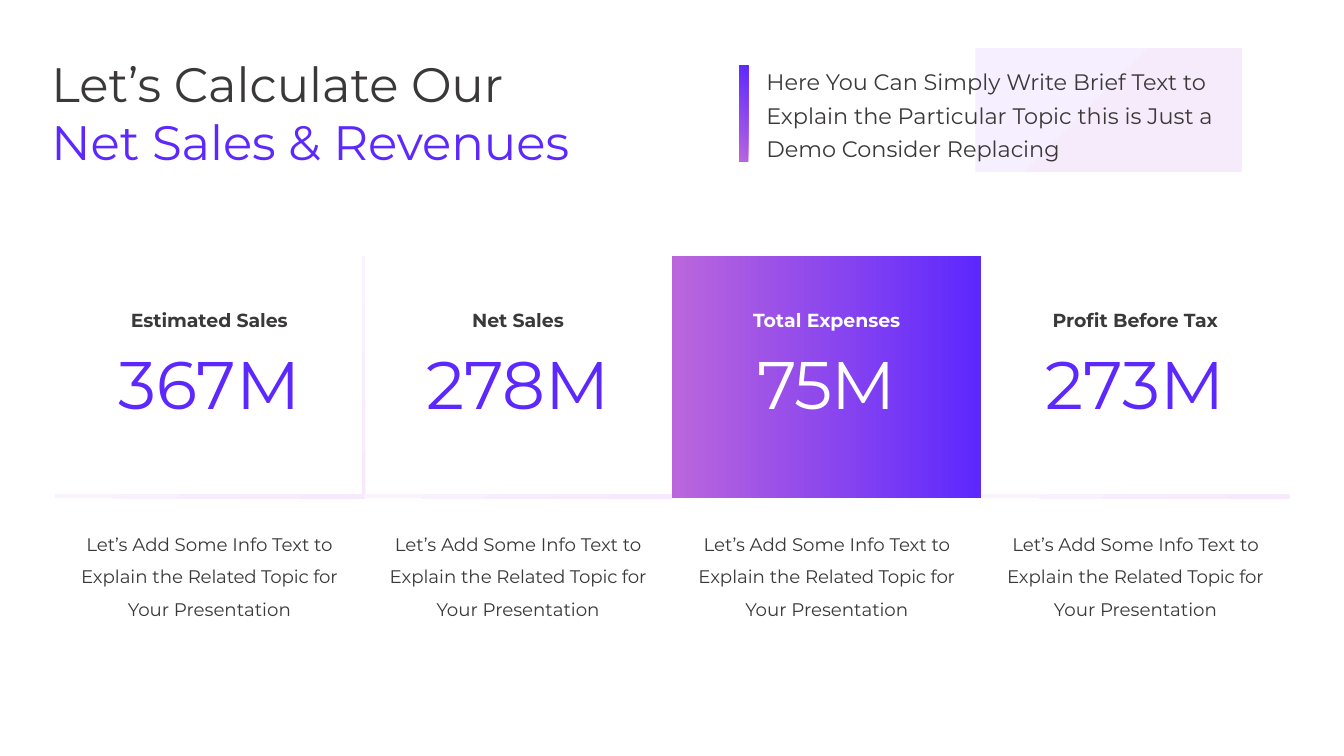
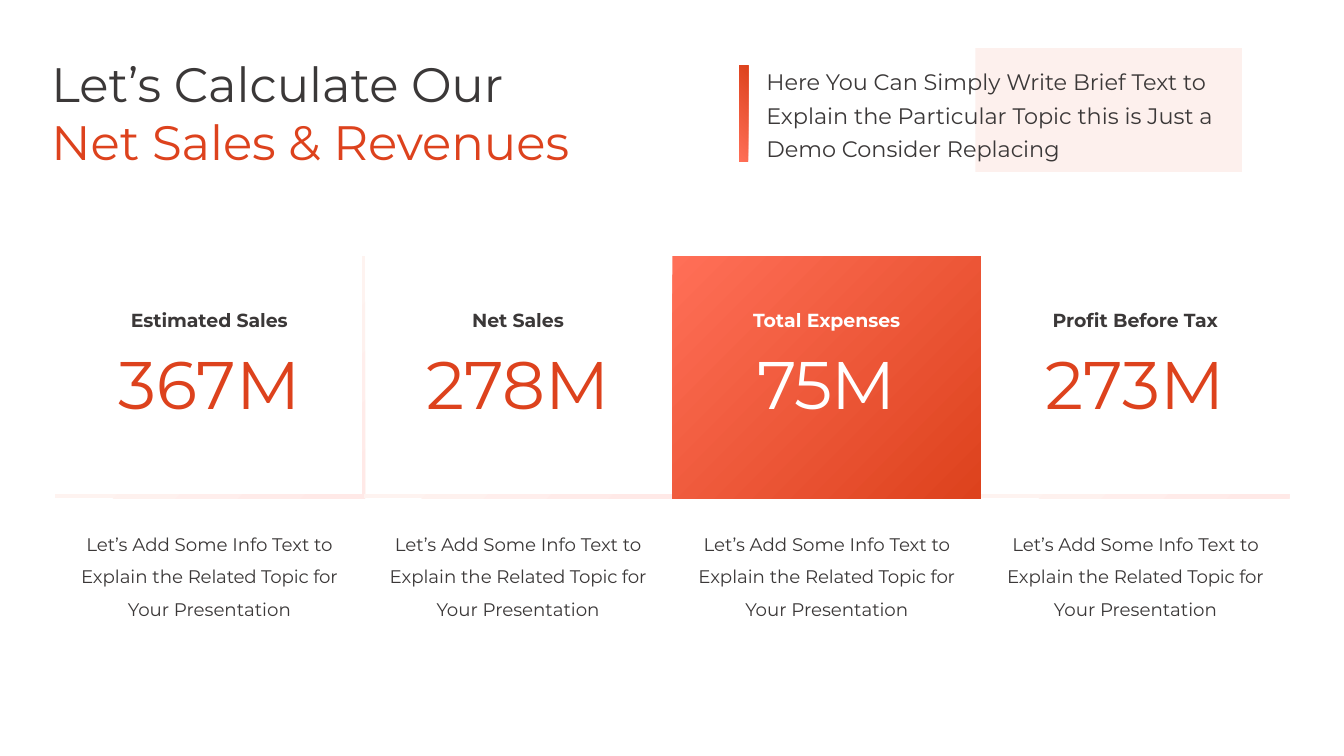
from dataclasses import dataclass
from typing import NamedTuple

from lxml import etree
from pptx import Presentation
from pptx.dml.color import RGBColor
from pptx.enum.shapes import MSO_SHAPE
from pptx.enum.text import MSO_ANCHOR, MSO_AUTO_SIZE, PP_ALIGN
from pptx.oxml.ns import qn
from pptx.util import Inches, Pt

RECTANGLE = MSO_SHAPE.RECTANGLE
LEFT, CENTER = PP_ALIGN.LEFT, PP_ALIGN.CENTER
TOP = MSO_ANCHOR.TOP
FIXED = MSO_AUTO_SIZE.NONE

# Focus of a radial gradient, as the l, t, r, b insets of its centre
BOTTOM_RIGHT = {"l": "100000", "t": "100000"}
TOP_RIGHT = {"l": "100000", "b": "100000"}


class Box(NamedTuple):
    """A box in inches; areas inside it are given in percent of it."""
    left: float
    top: float
    width: float
    height: float

    def area(self, left, top, width, height):
        return Box(self.left + self.width * left / 100,
                   self.top + self.height * top / 100,
                   self.width * width / 100,
                   self.height * height / 100)

    def columns(self, count):
        share = 100 / count
        return [self.area(share * i, 0, share, 100) for i in range(count)]

    def lengths(self):
        return [Inches(length) for length in self]


class Gradient(NamedTuple):
    near: str
    far: str
    start: float = 0


@dataclass(frozen=True)
class Theme:
    accent: Gradient
    panel: Gradient
    rule: Gradient
    linear_card: bool = False
    font: str = "Montserrat"
    ink: str = "3B3838"
    white: str = "FFFFFF"
    title_size: float = 34.5
    brief_size: float = 16
    brief_leading: float = 24
    label_size: float = 13.5
    value_size: float = 48
    info_size: float = 13
    info_spacing: float = 1.5


THEMES = [
    Theme(accent=Gradient("5D28FE", "BB66DD"),
          panel=Gradient("F6EBFB", "F6EFFF", 0.12),
          rule=Gradient("F6E9FB", "F8F3FF"),
          linear_card=True),
    Theme(accent=Gradient("DD421D", "FF6F57"),
          panel=Gradient("FFEDEB", "FDF0ED", 0.12),
          rule=Gradient("FFE9E7", "FEF3F0")),
]

PAGE = Box(0, 0, 13.33, 7.5)
TITLE = ["Let’s Calculate Our", "Net Sales & Revenues"]
BRIEF = ["Here You Can Simply Write Brief Text to",
         "Explain the Particular Topic this is Just a",
         "Demo Consider Replacing"]
INFO = [[("Let’s Add Some Info Text to", 0)],
        [("Explain the ", 0), ("Related Topic for", -0.1)],
        [("Your Presentation", 0)]]
METRICS = [("Estimated Sales", "367M"), ("Net Sales", "278M"),
           ("Total Expenses", "75M"), ("Profit Before Tax", "273M")]
DIVIDED, HIGHLIGHTED = 0, 2


# Shared building blocks
def add_gradient_box(page, box, gradient, focus=None):
    """Rectangle with a radial gradient, or a leftward one without focus."""
    shape = page.shapes.add_shape(RECTANGLE, *box.lengths())
    shape.shadow.inherit = False
    shape.line.fill.background()
    fill = shape.fill
    fill.gradient()
    near, far = fill.gradient_stops
    near.color.rgb = RGBColor.from_string(gradient.near)
    near.position = gradient.start
    far.color.rgb = RGBColor.from_string(gradient.far)
    far.position = 1
    fill.gradient_angle = 180
    if focus:
        grad_fill = shape.element.spPr.find(qn("a:gradFill"))
        grad_fill.remove(grad_fill.find(qn("a:lin")))
        radial = etree.SubElement(grad_fill, qn("a:path"))
        radial.set("path", "circle")
        etree.SubElement(radial, qn("a:fillToRect"), focus)
    return shape


def prepare_frame(shape):
    frame = shape.text_frame
    frame.word_wrap = True
    frame.auto_size = FIXED
    frame.vertical_anchor = TOP
    return frame


def add_para(frame, first, align, spacing=None):
    para = frame.paragraphs[0] if first else frame.add_paragraph()
    para.alignment = align
    para.space_before = Pt(0)
    if spacing:
        para.line_spacing = spacing
    return para


def add_span(para, text, theme, size, color, bold=False, tracking=0):
    span = para.add_run()
    span.text = text
    span.font.name = theme.font
    span.font.size = Pt(size)
    span.font.bold = bold
    span.font.color.rgb = RGBColor.from_string(color)
    if tracking:
        span._r.get_or_add_rPr().set("spc", str(round(tracking * 100)))


def add_text(page, box):
    return prepare_frame(page.shapes.add_textbox(*box.lengths()))


def place(placeholder, box):
    (placeholder.left, placeholder.top,
     placeholder.width, placeholder.height) = box.lengths()
    return prepare_frame(placeholder)


# Title: dark first line, accent second line
def fill_title(page, box, theme):
    frame = place(page.shapes.title, box)
    for i, (text, color) in enumerate(zip(TITLE, (theme.ink, theme.accent.near))):
        para = add_para(frame, i == 0, LEFT)
        add_span(para, text, theme, theme.title_size, color)


# Brief: pale panel behind the text, accent bar on its left
def fill_brief(page, box, theme):
    panel = add_gradient_box(page, box.area(47, 0, 53, 100),
                             theme.panel, BOTTOM_RIGHT)
    panel.element.getparent().insert(2, panel.element)
    add_gradient_box(page, box.area(0, 13.9, 1.8, 78), theme.accent, TOP_RIGHT)

    frame = place(page.placeholders[1], box.area(3.4, 6.55, 98, 88))
    for i, text in enumerate(BRIEF):
        para = add_para(frame, i == 0, LEFT, Pt(theme.brief_leading))
        settings = para._p.get_or_add_pPr()
        settings.set("marL", "0")
        settings.set("indent", "0")
        etree.SubElement(settings, qn("a:buNone"))
        add_span(para, text, theme, theme.brief_size, theme.ink)


# Metric column: card or rule, label, value and info text
def add_metric(page, box, theme, label, value, highlighted, divided):
    if highlighted:
        focus = None if theme.linear_card else BOTTOM_RIGHT
        add_gradient_box(page, box.area(0, 0, 100, 66), theme.accent, focus)
    else:
        add_gradient_box(page, box.area(0, 64.9, 100, 1.1),
                         theme.rule, BOTTOM_RIGHT)
    if divided:
        add_gradient_box(page, box.area(99.5, 0, 1, 66),
                         theme.rule, BOTTOM_RIGHT)

    label_color = theme.white if highlighted else theme.ink
    value_color = theme.white if highlighted else theme.accent.near
    para = add_para(add_text(page, box.area(0, 12.9, 100, 9)), True, CENTER)
    add_span(para, label, theme, theme.label_size, label_color, bold=True)
    para = add_para(add_text(page, box.area(0, 22.25, 100, 25)), True, CENTER)
    add_span(para, value, theme, theme.value_size, value_color,
             tracking=-1 if highlighted else 0)

    frame = add_text(page, box.area(4, 71.15, 92, 28.85))
    for i, line in enumerate(INFO):
        para = add_para(frame, i == 0, CENTER, theme.info_spacing)
        for text, tracking in line:
            add_span(para, text, theme, theme.info_size, theme.ink,
                     tracking=tracking)


def add_metrics(page, box, theme):
    columns = box.columns(len(METRICS))
    for i, (column, (label, value)) in enumerate(zip(columns, METRICS)):
        add_metric(page, column, theme, label, value,
                   i == HIGHLIGHTED, i == DIVIDED)


def add_sales_page(deck, theme):
    page = deck.slides.add_slide(deck.slide_layouts[1])
    fill_title(page, PAGE.area(3.08, 6.53, 45, 16.8), theme)
    fill_brief(page, PAGE.area(55, 6.4, 37.4, 16.3), theme)
    add_metrics(page, PAGE.area(4.09, 33.87, 91.87, 48.53), theme)


def main():
    deck = Presentation()
    deck.slide_width = Inches(PAGE.width)
    deck.slide_height = Inches(PAGE.height)
    for theme in THEMES:
        add_sales_page(deck, theme)
    deck.save("out.pptx")


if __name__ == "__main__":
    main()
